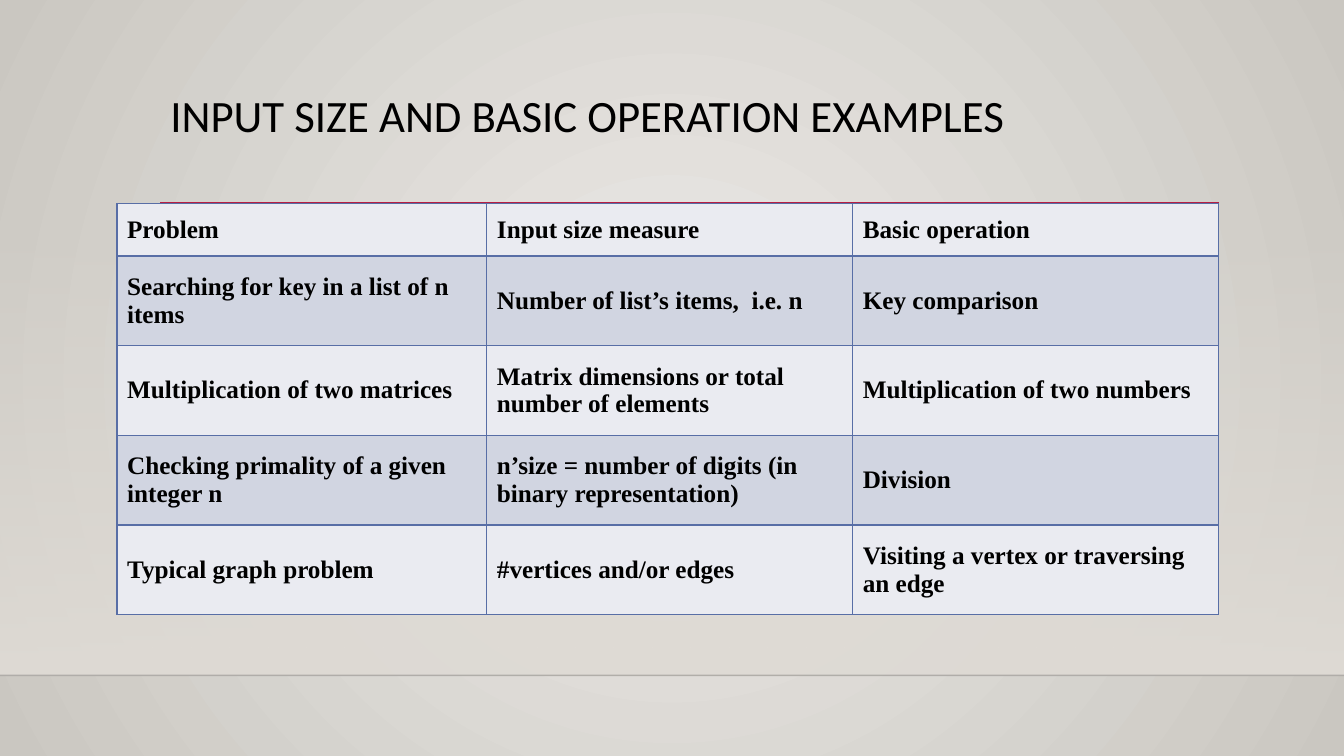
"""Build a slide with a table of input sizes and basic operations."""
from lxml.etree import SubElement
from pptx import Presentation
from pptx.dml.color import RGBColor
from pptx.enum.shapes import MSO_CONNECTOR, MSO_SHAPE
from pptx.enum.text import MSO_ANCHOR, PP_ALIGN
from pptx.oxml import parse_xml
from pptx.oxml.ns import nsdecls, qn
from pptx.util import Cm, Pt


def rgb(value):
    return RGBColor.from_string(value)


def set_gradient(fill, colors):
    fill.gradient()
    for stop, color, position in zip(fill.gradient_stops, colors, (0, 1)):
        stop.color.rgb = rgb(color)
        stop.position = position


prs = Presentation()
prs.slide_width, prs.slide_height = Cm(33.87), Cm(19.05)
s = prs.slides.add_slide(prs.slide_layouts[5])

set_gradient(s.background.fill, ("ECEAE7", "CAC7C1"))
grad = s.background._cSld.find(".//" + qn("a:gradFill"))
grad.replace(grad.find(qn("a:lin")), parse_xml(
    f'<a:path {nsdecls("a")} path="circle">'
    '<a:fillToRect l="50000" t="50000" r="50000" b="50000"/></a:path>'))

band = s.shapes.add_shape(MSO_SHAPE.RECTANGLE, 0, Cm(5.61), prs.slide_width, Cm(11.41))
band.shadow.inherit = False
band.line.fill.background()
set_gradient(band.fill, ("DFDBD5", "DFDBD5"))
band.fill.gradient_angle = 270
SubElement(band._element.spPr.find(".//" + qn("a:srgbClr")), qn("a:alpha"), val="0")

rules = [
    (0, 33.87, 17.02, "000001", 1, 20),
    (4.04, 30.73, 5.13, "B71E42", 2.5, 100),
]
for left, right, y, color, width, opacity in rules:
    rule = s.shapes.add_connector(MSO_CONNECTOR.STRAIGHT, Cm(left), Cm(y), Cm(right), Cm(y))
    rule.line.color.rgb = rgb(color)
    rule.line.width = Pt(width)
    spPr = rule._element.spPr
    SubElement(spPr.find(".//" + qn("a:srgbClr")), qn("a:alpha"), val=str(opacity * 1000))
    SubElement(spPr, qn("a:effectLst"))

title = s.shapes.title
place = {"left": Cm(4.04), "top": Cm(2.24), "width": Cm(26.67), "height": Cm(2.92)}
for name, value in place.items():
    setattr(title, name, value)
tf = title.text_frame
tf.text = "INPUT SIZE AND BASIC OPERATION EXAMPLES"
tf.word_wrap = True
tf.vertical_anchor = MSO_ANCHOR.TOP
p = tf.paragraphs[0]
p.alignment = PP_ALIGN.LEFT
p.line_spacing = 0.9
for name, value in {"name": "Calibri", "size": Pt(32), "bold": False}.items():
    setattr(p.font, name, value)
p.font.color.rgb = rgb("000000")

rows = [
    ("Problem", "Input size measure", "Basic operation"),
    ("Searching for key in a list of n items", "Number of list’s items,  i.e. n",
     "Key comparison"),
    ("Multiplication of two matrices", "Matrix dimensions or total number of elements",
     "Multiplication of two numbers"),
    ("Checking primality of a given integer n",
     "n’size = number of digits (in binary representation)", "Division"),
    ("Typical graph problem", "#vertices and/or edges",
     "Visiting a vertex or traversing an edge"),
]
cell_font = {"name": "Times New Roman", "size": Pt(18), "bold": True}
table = s.shapes.add_table(len(rows), 3, Cm(2.95), Cm(5.13), Cm(27.76), Cm(10.36)).table
for column, width in zip(table.columns, (9.32, 9.22, 9.22)):
    column.width = Cm(width)
for i, texts in enumerate(rows):
    table.rows[i].height = Cm(2.26 if i else 1.32)
    for j, text in enumerate(texts):
        cell = table.cell(i, j)
        cell.text = text
        cell.vertical_anchor = MSO_ANCHOR.MIDDLE
        for side in "LRTB":
            ln = SubElement(cell._tc.get_or_add_tcPr(), qn(f"a:ln{side}"), w=str(Pt(1)))
            SubElement(SubElement(ln, qn("a:solidFill")), qn("a:srgbClr"), val="586EA6")
        cell.fill.solid()
        cell.fill.fore_color.rgb = rgb("D1D5E1" if i % 2 else "EAEBF1")
        font = cell.text_frame.paragraphs[0].font
        for name, value in cell_font.items():
            setattr(font, name, value)
        font.color.rgb = rgb("000000")

prs.save("out.pptx")
